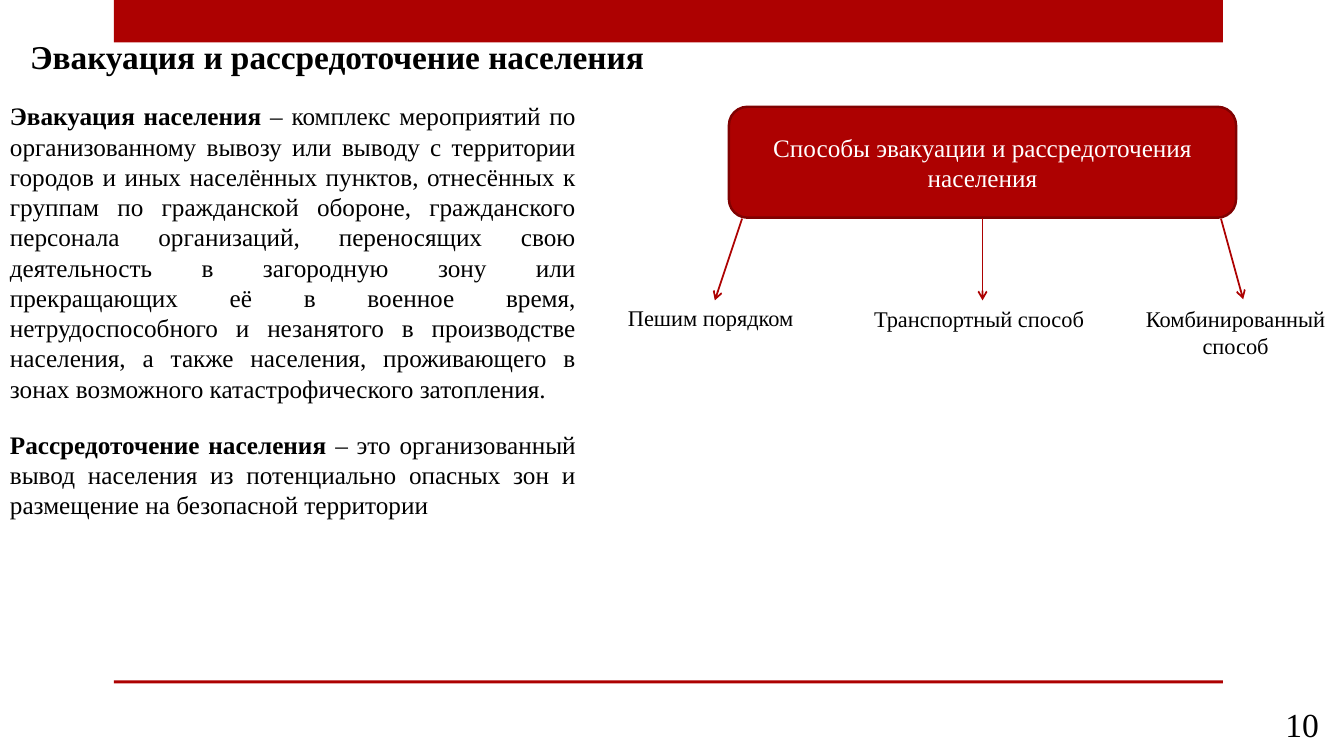
from pptx import Presentation
from pptx.dml.color import RGBColor
from pptx.enum.shapes import MSO_CONNECTOR as Line, MSO_SHAPE as Shape
from pptx.enum.text import MSO_ANCHOR as Anchor, PP_ALIGN as Align
from pptx.oxml.ns import qn
from pptx.util import Inches, Pt
from lxml.etree import SubElement

RED = "AD0101"


def color(code):
    return RGBColor.from_string(code)


def write(shape, runs, size, align=Align.LEFT, anchor=Anchor.TOP, ink="000000"):
    frame = shape.text_frame
    frame.word_wrap = True
    frame.vertical_anchor = anchor
    para = frame.paragraphs[0]
    para.alignment = align
    para.font.name = "Times New Roman"
    para.font.size = Pt(size)
    para.font.color.rgb = color(ink)
    for text, bold in runs:
        run = para.add_run()
        run.text = text
        run.font.bold = bold


deck = Presentation()
deck.slide_width, deck.slide_height = Inches(13.33), Inches(7.5)
slide = deck.slides.add_slide(deck.slide_layouts[6])
shapes = slide.shapes

for top, height in [(0, 0.42), (6.75, 0.03)]:
    bar = shapes.add_shape(Shape.RECTANGLE, Inches(1.13), Inches(top), Inches(11), Inches(height))
    bar.shadow.inherit = False
    bar.fill.solid()
    bar.fill.fore_color.rgb = color(RED)
    bar.line.fill.background()

title = [("Эвакуация и рассредоточение населения", True)]
evac = [
    ("Эвакуация населения", True),
    (" – комплекс мероприятий по организованному вывозу или выводу с территории "
     "городов и иных населённых пунктов, отнесённых к группам по гражданской обороне, "
     "гражданского персонала организаций, переносящих свою деятельность в загородную "
     "зону или прекращающих её в военное время, нетрудоспособного и незанятого в "
     "производстве населения, а также населения, проживающего в зонах возможного "
     "катастрофического затопления.", False),
]
spread = [
    ("Рассредоточение населения ", True),
    ("– это организованный вывод населения из потенциально опасных зон и "
     "размещение на безопасной территории", False),
]
texts = [
    (0.2, 0.28, 6.7, 0.53, title, 23.8, Align.LEFT, Anchor.BOTTOM),
    (12.43, 6.98, 0.75, 0.4, [("10", False)], 24, Align.RIGHT, Anchor.MIDDLE),
    (0, 0.95, 5.81, 3.13, evac, 18, Align.JUSTIFY, Anchor.TOP),
    (0, 4.21, 5.81, 1.01, spread, 18, Align.JUSTIFY, Anchor.TOP),
    (6.13, 2.97, 2.2, 0.37, [("Пешим порядком", False)], 16, Align.LEFT, Anchor.TOP),
    (8.57, 2.98, 2.35, 0.37, [("Транспортный способ", False)], 16, Align.LEFT, Anchor.TOP),
    (11.08, 2.98, 2.35, 0.64, [("Комбинированный способ", False)], 16, Align.CENTER, Anchor.TOP),
]
for left, top, width, height, runs, size, align, anchor in texts:
    box = shapes.add_textbox(Inches(left), Inches(top), Inches(width), Inches(height))
    write(box, runs, size, align, anchor)

ways = shapes.add_shape(Shape.ROUNDED_RECTANGLE, Inches(7.23), Inches(1.06), Inches(5.03), Inches(1.1))
ways.shadow.inherit = False
ways.fill.solid()
ways.fill.fore_color.rgb = color(RED)
ways.line.color.rgb = color("800101")
ways.line.width = Pt(1.75)
write(ways, [("Способы эвакуации и рассредоточения населения", False)], 18,
      Align.CENTER, Anchor.MIDDLE, "FFFFFF")

for start, end, low in [(7.36, 7.09, 2.98), (9.74, 9.74, 2.98), (12.11, 12.33, 2.97)]:
    arrow = shapes.add_connector(Line.STRAIGHT, Inches(start), Inches(2.17), Inches(end), Inches(low))
    if start == end:
        arrow.begin_connect(ways, 2)
        arrow.end_x = arrow.begin_x
    arrow.line.color.rgb = color(RED)
    arrow.line.width = Pt(1.25)
    SubElement(arrow.line._get_or_add_ln(), qn("a:tailEnd"), type="arrow")
    SubElement(arrow._element.spPr, qn("a:effectLst"))

deck.save("out.pptx")
